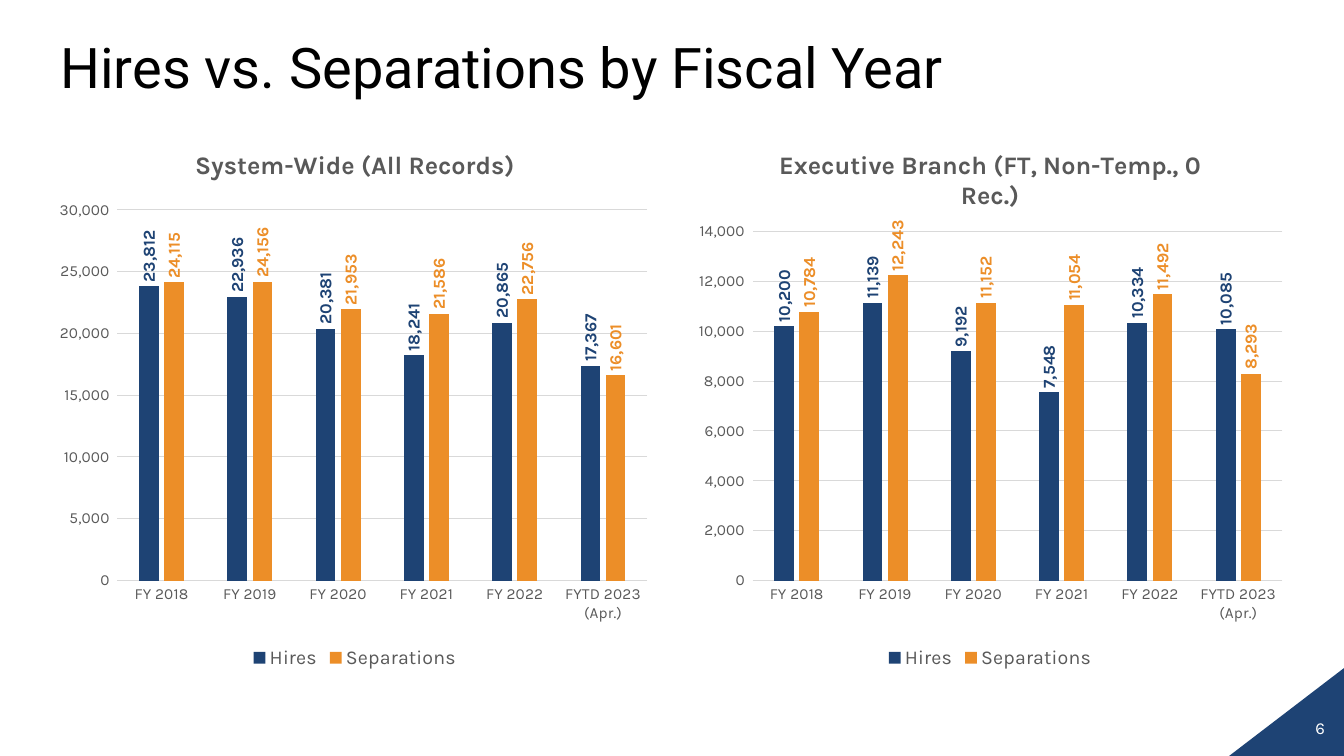
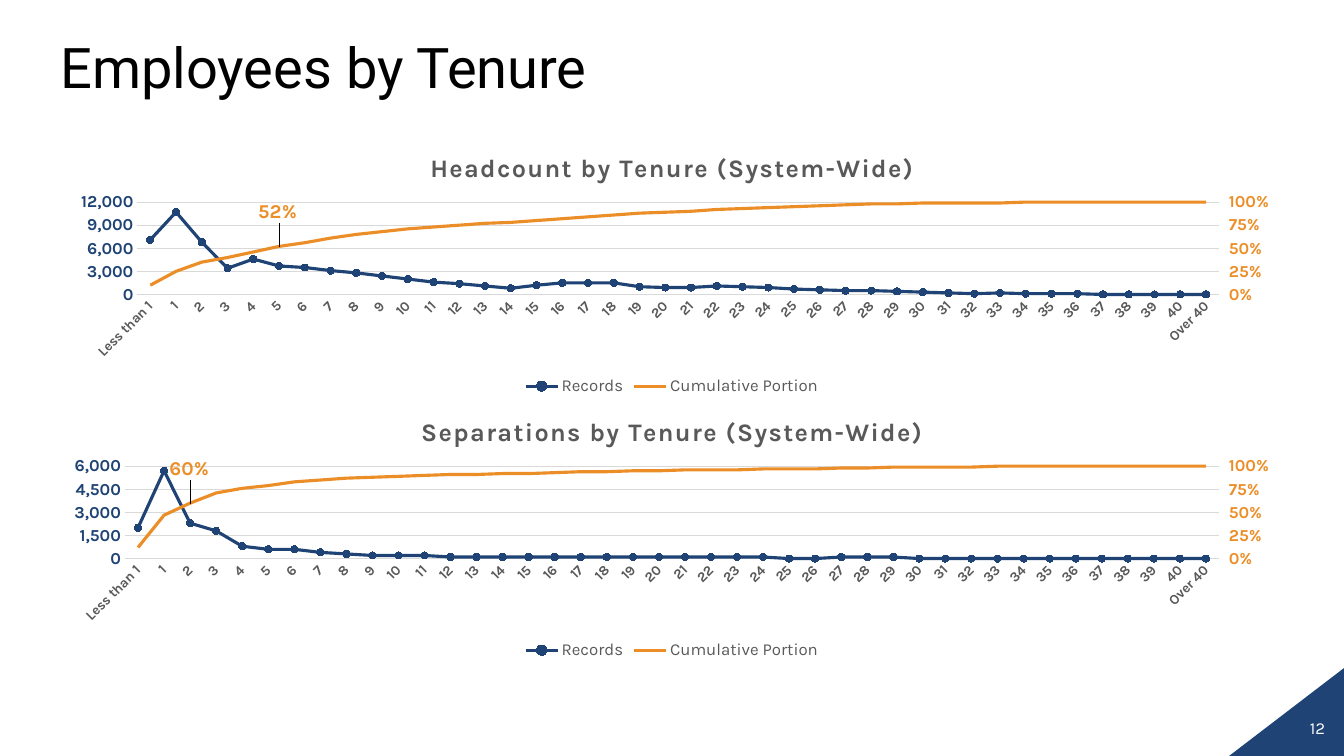
from copy import deepcopy

from lxml import etree
from pptx import Presentation
from pptx.chart.axis import ValueAxis
from pptx.chart.data import CategoryChartData
from pptx.dml.color import RGBColor
from pptx.enum import chart as ch, shapes, text
from pptx.oxml.ns import qn
from pptx.util import Inches, Pt

NAVY = RGBColor(0x1E, 0x43, 0x74)
ORANGE = RGBColor(0xEC, 0x8E, 0x28)
GRAY = RGBColor(0x59, 0x59, 0x59)
GRID = RGBColor(0xD9, 0xD9, 0xD9)
BLACK = RGBColor(0, 0, 0)
WHITE = RGBColor(255, 255, 255)
BODY_FONT = "Karla"
TITLE_FONT = "Roboto"
COUNT_FORMAT = r"#,##0_);[Red]\(#,##0\)"
C15 = "http://schemas.microsoft.com/office/drawing/2012/chart"

YEARS = ["FY 2018", "FY 2019", "FY 2020", "FY 2021", "FY 2022", "FYTD 2023 (Apr.)"]
TENURES = ["Less than 1", *map(str, range(1, 41)), "Over 40"]


def style_font(font, size, color, bold=False, name=BODY_FONT):
    font.size, font.bold, font.name = Pt(size), bold, name
    font.color.rgb = color


def write_text(frame, words, size=12, color=GRAY, bold=False, name=BODY_FONT,
               align=None, line_spacing=None, tracking=None):
    paragraph = frame.paragraphs[0]
    paragraph.alignment = align
    if line_spacing:
        paragraph.line_spacing = line_spacing
    run = paragraph.add_run()
    run.text = words
    style_font(run.font, size, color, bold, name)
    if tracking:
        run.font._element.set("spc", str(tracking))


def rotate_text(element, degrees):
    body = element.find(qn("c:txPr")).find(qn("a:bodyPr"))
    body.set("rot", str(degrees * 60000))
    body.set("vert", "horz")


def add_layout(x, y, width=None, height=None):
    """Manual layout, in fractions of the chart; without a size it is an offset."""
    layout = etree.Element(qn("c:layout"))
    manual = etree.SubElement(layout, qn("c:manualLayout"))
    values = {"x": x, "y": y}
    if width:
        values = {"layoutTarget": "inner", "xMode": "edge", "yMode": "edge",
                  "x": x, "y": y, "w": width, "h": height}
    for tag, value in values.items():
        etree.SubElement(manual, qn("c:" + tag)).set("val", str(value))
    return layout


class Deck:
    def __init__(self):
        self.presentation = Presentation()
        self.presentation.slide_width = Inches(13.33)
        self.presentation.slide_height = Inches(7.5)
        self.slide = None

    def add_slide(self, title, number):
        self.slide = self.presentation.slides.add_slide(self.presentation.slide_layouts[5])
        # Title
        shape = self.slide.shapes.title
        shape.left, shape.top = Inches(0.5), Inches(0.01)
        shape.width, shape.height = Inches(12.33), Inches(1.37)
        frame = shape.text_frame
        frame.auto_size = text.MSO_AUTO_SIZE.NONE
        frame.vertical_anchor = text.MSO_ANCHOR.MIDDLE
        write_text(frame, title, size=40, color=BLACK, name=TITLE_FONT,
                   align=text.PP_ALIGN.LEFT, line_spacing=0.9)
        # Corner with page number
        corner = self.slide.shapes.add_shape(
            shapes.MSO_SHAPE.RIGHT_TRIANGLE,
            Inches(12.19), Inches(6.62), Inches(1.15), Inches(0.88))
        corner.shadow.inherit = False
        corner.fill.solid()
        corner.fill.fore_color.rgb = NAVY
        corner.line.fill.background()
        corner._element.spPr.find(qn("a:xfrm")).set("flipH", "1")
        box = self.slide.shapes.add_textbox(
            Inches(12.09), Inches(7.07), Inches(1.15), Inches(0.43))
        box.text_frame.word_wrap = True
        write_text(box.text_frame, str(number), color=WHITE, align=text.PP_ALIGN.RIGHT)

    def add_chart(self, kind, title, categories, series, frame, plot_area, maximum, step,
                  legend_size, tracking=None):
        """Add a chart; series holds (name, values, number format) tuples."""
        data = CategoryChartData()
        data.categories = categories
        for name, values, number_format in series:
            data.add_series(name, values, number_format)
        chart = self.slide.shapes.add_chart(kind, *map(Inches, frame), data).chart
        style_font(chart.font, 10, BLACK)
        chart.has_title = True
        write_text(chart.chart_title.text_frame, title, size=18, bold=True, tracking=tracking)
        chart.has_legend = True
        chart.legend.position = ch.XL_LEGEND_POSITION.BOTTOM
        chart.legend.include_in_layout = False
        style_font(chart.legend.font, legend_size, GRAY)
        chart.plots[0].vary_by_categories = False

        # Axes
        category_axis, value_axis = chart.category_axis, chart.value_axis
        category_axis.format.line.color.rgb = GRID
        category_axis.format.line.width = Pt(0.75)
        value_axis.format.line.fill.background()
        value_axis.minimum_scale = 0
        value_axis.maximum_scale, value_axis.major_unit = maximum, step
        gridlines = value_axis.major_gridlines.format.line
        gridlines.color.rgb, gridlines.width = GRID, Pt(0.75)
        for axis in (category_axis, value_axis):
            axis.major_tick_mark = ch.XL_TICK_MARK.NONE
            style_font(axis.tick_labels.font, 11, GRAY)

        # Plot area
        area = chart._chartSpace.find(qn("c:chart")).find(qn("c:plotArea"))
        for old in area.findall(qn("c:layout")):
            area.remove(old)
        area.insert(0, add_layout(*plot_area))
        return chart

    def add_column_chart(self, title, left, hires, separations, plot_area, maximum, step):
        chart = self.add_chart(
            ch.XL_CHART_TYPE.COLUMN_CLUSTERED, title, YEARS,
            [("Hires", hires, COUNT_FORMAT), ("Separations", separations, COUNT_FORMAT)],
            (left, 1.27, 6.04, 5.41), plot_area, maximum, step, legend_size=14)
        plot = chart.plots[0]
        plot.gap_width, plot.overlap = 219, -27
        chart.value_axis.tick_labels.number_format = COUNT_FORMAT
        chart.value_axis.tick_labels.number_format_is_linked = False
        for series, color in zip(plot.series, (NAVY, ORANGE)):
            series.format.fill.solid()
            series.format.fill.fore_color.rgb = color
            labels = series.data_labels
            labels.show_value = True
            labels.position = ch.XL_LABEL_POSITION.OUTSIDE_END
            labels.number_format = COUNT_FORMAT
            labels.number_format_is_linked = False
            style_font(labels.font, 12, color, bold=True)
            rotate_text(labels._element, -90)

    def add_tenure_chart(self, title, top, records, percents, plot_area, maximum,
                         marked_point, leader=False):
        portions = [percent / 100 for percent in percents]
        chart = self.add_chart(
            ch.XL_CHART_TYPE.LINE_MARKERS, title, TENURES,
            [("Records", records, "#,##0"), ("Cumulative Portion", portions, "0%")],
            (0.5, top, 12.33, 2.62), plot_area, maximum, maximum / 4,
            legend_size=12, tracking=100)
        style_font(chart.category_axis.tick_labels.font, 10, GRAY, bold=True)
        rotate_text(chart.category_axis._element, -45)
        labels = chart.value_axis.tick_labels
        labels.number_format, labels.number_format_is_linked = "#,##0", False
        style_font(labels.font, 12, NAVY, bold=True)

        # Lines
        count_line, portion_line = chart.plots[0].series
        for series, color in ((count_line, NAVY), (portion_line, ORANGE)):
            series.smooth = False
            series.format.line.color.rgb = color
            series.format.line.width = Pt(2.25)
        marker = count_line.marker
        marker.style, marker.size = ch.XL_MARKER_STYLE.CIRCLE, 5
        marker.format.fill.solid()
        marker.format.fill.fore_color.rgb = NAVY
        marker.format.line.color.rgb = NAVY
        portion_line.marker.style = ch.XL_MARKER_STYLE.NONE

        # One labelled point, moved up and left of its place
        series_labels = portion_line.data_labels
        series_labels.show_value = False
        label = portion_line.points[marked_point].data_label
        style_font(label.font, 14, ORANGE, bold=True)
        label.position = ch.XL_LABEL_POSITION.RIGHT
        label_element = series_labels._element.find(qn("c:dLbl"))
        label_element.find(qn("c:idx")).addnext(add_layout(-0.02, -0.13))
        if leader:
            extensions = etree.SubElement(series_labels._element, qn("c:extLst"))
            extension = etree.SubElement(extensions, qn("c:ext"), nsmap={"c15": C15})
            extension.set("uri", "{CE6537A1-D6FC-4f65-9D91-7224C49458BB}")
            etree.SubElement(extension, f"{{{C15}}}showLeaderLines").set("val", "1")
        self.move_to_right_axis(chart, portion_line)

    @staticmethod
    def move_to_right_axis(chart, series):
        """Give one series its own line plot, with a percent axis on the right."""
        first_plot = series._element.getparent()
        category_axis, value_axis = chart.category_axis._element, chart.value_axis._element
        second_plot = deepcopy(first_plot)
        for copied in second_plot.findall(qn("c:ser")):
            second_plot.remove(copied)
        second_plot.find(qn("c:axId")).addprevious(series._element)
        first_plot.addnext(second_plot)
        hidden_axis, right_axis = deepcopy(category_axis), deepcopy(value_axis)
        value_axis.addnext(right_axis)
        right_axis.addnext(hidden_axis)

        category_id, value_id = "50010", "50020"
        for element, axis_id in zip(second_plot.findall(qn("c:axId")), (category_id, value_id)):
            element.set("val", axis_id)
        for axis, own, other in ((hidden_axis, category_id, value_id),
                                 (right_axis, value_id, category_id)):
            axis.find(qn("c:axId")).set("val", own)
            axis.find(qn("c:crossAx")).set("val", other)
        hidden_axis.find(qn("c:delete")).set("val", "1")
        right_axis.find(qn("c:axPos")).set("val", "r")
        right_axis.find(qn("c:crosses")).set("val", "max")

        percent_axis = ValueAxis(right_axis)
        percent_axis.has_major_gridlines = False
        percent_axis.maximum_scale, percent_axis.major_unit = 1, 0.25
        percent_axis.major_tick_mark = ch.XL_TICK_MARK.OUTSIDE
        percent_axis.tick_labels.number_format = "0%"
        style_font(percent_axis.tick_labels.font, 12, ORANGE, bold=True)


def main():
    deck = Deck()

    # Hires and separations
    deck.add_slide("Hires vs. Separations by Fiscal Year", 6)
    deck.add_column_chart(
        "System-Wide (All Records)", 0.5,
        [23812, 22936, 20381, 18241, 20865, 17367],
        [24115, 24156, 21953, 21586, 22756, 16601],
        (0.11, 0.15, 0.87, 0.68), 30000, 5000)
    deck.add_column_chart(
        "Executive Branch (FT, Non-Temp., 0 Rec.)", 6.8,
        [10200, 11139, 9192, 7548, 10334, 10085],
        [10784, 12243, 11152, 11054, 11492, 8293],
        (0.11, 0.19, 0.87, 0.64), 14000, 2000)

    # Tenure
    deck.add_slide("Employees by Tenure", 12)
    deck.add_tenure_chart(
        "Headcount by Tenure (System-Wide)", 1.35,
        [7100, 10700, 6800, 3400, 4600, 3700, 3500, 3100, 2800, 2400, 2000, 1600, 1400, 1100,
         800, 1200, 1500, 1500, 1500, 1000, 900, 900, 1100, 1000, 900, 700, 600, 500, 500, 400,
         300, 200, 100, 200, 100, 100, 100] + [0] * 5,
        [10, 25, 35, 40, 46, 52, 56, 61, 65, 68, 71, 73, 75, 77, 78, 80, 82, 84, 86, 88, 89,
         90, 92, 93, 94, 95, 96, 97, 98, 98, 99, 99, 99, 99] + [100] * 8,
        (0.07, 0.25, 0.87, 0.35), 12000, marked_point=5, leader=True)
    deck.add_tenure_chart(
        "Separations by Tenure (System-Wide)", 3.97,
        [2000, 5700, 2300, 1800, 800, 600, 600, 400, 300, 200, 200, 200] + [100] * 13
        + [0, 0, 100, 100, 100] + [0] * 12,
        [12, 47, 60, 71, 76, 79, 83, 85, 87, 88, 89, 90, 91, 91, 92, 92, 93, 94, 94, 95, 95,
         96, 96, 96, 97, 97, 97, 98, 98, 99, 99, 99, 99] + [100] * 9,
        (0.06, 0.25, 0.88, 0.35), 6000, marked_point=2)

    deck.presentation.save("out.pptx")


if __name__ == "__main__":
    main()
